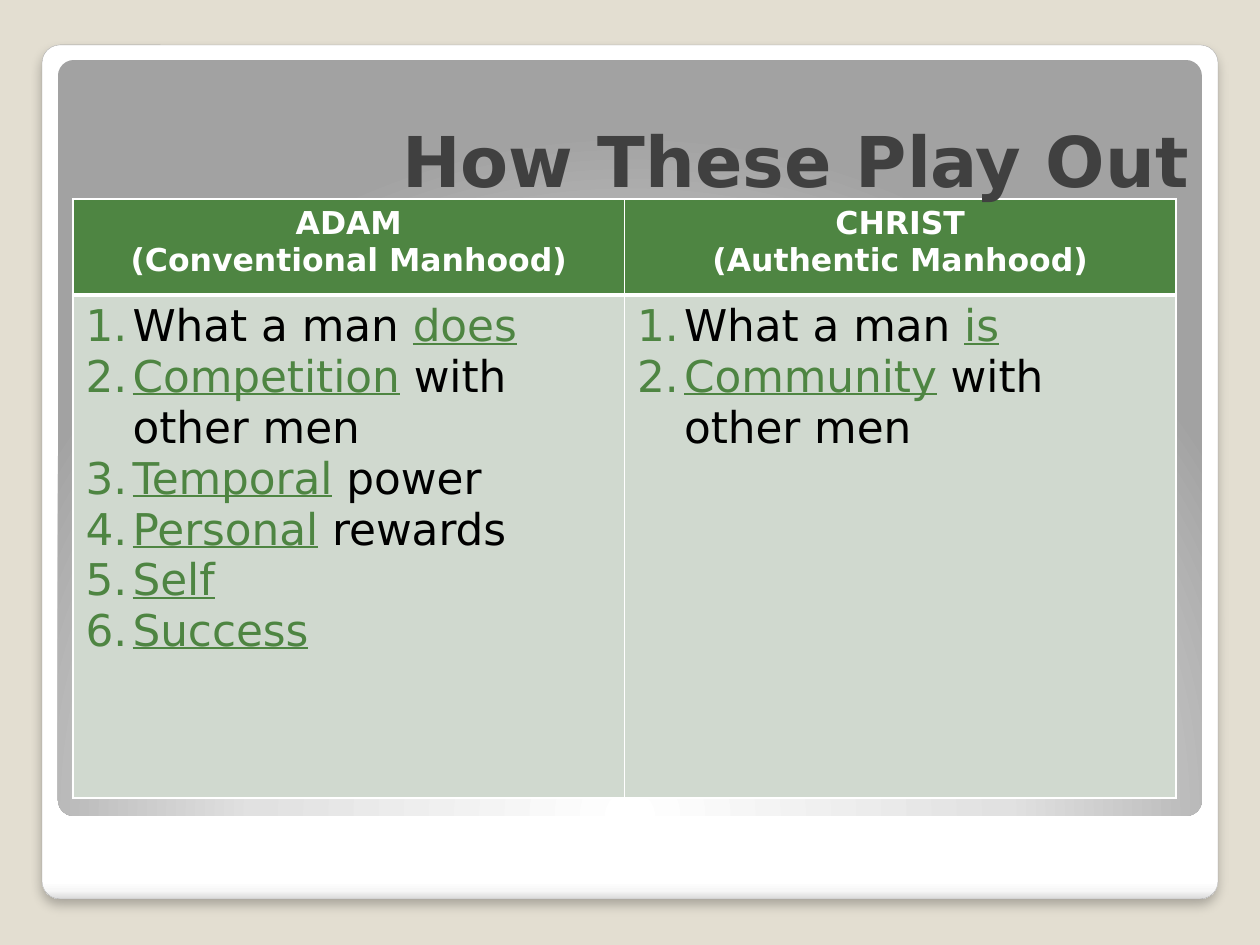
from lxml.etree import SubElement
from pptx import Presentation
from pptx.dml.color import RGBColor
from pptx.enum.shapes import MSO_SHAPE
from pptx.enum.text import MSO_ANCHOR, PP_ALIGN
from pptx.oxml import parse_xml
from pptx.oxml.ns import nsdecls, qn
from pptx.util import Pt

EMU_PER_PX = 914400 / 126
FONT = "DejaVu Sans"
COLORS = {
    "background": "E3DED1",
    "white": "FFFFFF",
    "black": "000000",
    "title": "404040",
    "green": "4E8542",
    "pale_green": "D0D9CF",
    "outline": "A4A4A4",
}

HEADINGS = [
    ("ADAM", "(Conventional Manhood)"),
    ("CHRIST", "(Authentic Manhood)"),
]
# Each item is (plain lead, underlined key word, plain tail)
LISTS = [
    [
        ("What a man ", "does", ""),
        ("", "Competition", " with other men"),
        ("", "Temporal", " power"),
        ("", "Personal", " rewards"),
        ("", "Self", ""),
        ("", "Success", ""),
    ],
    [
        ("What a man ", "is", ""),
        ("", "Community", " with other men"),
    ],
]


def px(length):
    return round(length * EMU_PER_PX)


def rgb(name):
    return RGBColor.from_string(COLORS[name])


def write_run(paragraph, text, size, color, bold=False, underline=False):
    run = paragraph.add_run()
    run.text = text
    font = run.font
    font.name, font.size = FONT, Pt(size)
    font.bold, font.underline = bold, underline
    font.color.rgb = rgb(color)


def paragraphs_of(text_frame, count):
    """Return count paragraphs, using the one that is already there."""
    for _ in range(count - 1):
        text_frame.add_paragraph()
    return text_frame.paragraphs


class SlideBuilder:
    def __init__(self, presentation):
        self.slide = presentation.slides.add_slide(presentation.slide_layouts[6])
        fill = self.slide.background.fill
        fill.solid()
        fill.fore_color.rgb = rgb("background")

    def panel(self, left, top, width, height, stops, direction):
        """Rounded rectangle with a gradient of (percent, hex) stops."""
        shape = self.slide.shapes.add_shape(
            MSO_SHAPE.ROUNDED_RECTANGLE, px(left), px(top), px(width), px(height))
        shape.adjustments[0] = 0.021
        shape.shadow.inherit = False
        shape.line.fill.background()
        stop_list = "".join(
            f'<a:gs pos="{percent * 1000}"><a:srgbClr val="{color}"/></a:gs>'
            for percent, color in stops)
        gradient = parse_xml(
            f'<a:gradFill {nsdecls("a")} rotWithShape="1">'
            f"<a:gsLst>{stop_list}</a:gsLst>{direction}</a:gradFill>")
        shape._element.spPr.find(qn("a:prstGeom")).addnext(gradient)
        return shape

    def outline(self, shape, color, width):
        shape.line.color.rgb = rgb(color)
        shape.line.width = Pt(width)

    def drop_shadow(self, shape, blur, distance, opacity):
        effects = shape._element.spPr.find(qn("a:effectLst"))
        effects.append(parse_xml(
            f'<a:outerShdw {nsdecls("a")} blurRad="{Pt(blur)}" dist="{Pt(distance)}" '
            f'dir="5400000" algn="t" rotWithShape="0"><a:srgbClr val="{COLORS["black"]}">'
            f'<a:alpha val="{opacity * 1000}"/></a:srgbClr></a:outerShdw>'))

    def title(self, text, left, top, width, height):
        box = self.slide.shapes.add_textbox(px(left), px(top), px(width), px(height))
        frame = box.text_frame
        frame.word_wrap = True
        frame.vertical_anchor = MSO_ANCHOR.BOTTOM
        paragraph = frame.paragraphs[0]
        paragraph.alignment = PP_ALIGN.RIGHT
        write_run(paragraph, text, size=40, color="title", bold=True)

    def table(self, left, top, width, row_heights, columns):
        table = self.slide.shapes.add_table(
            len(row_heights), columns, px(left), px(top),
            px(width), px(sum(row_heights))).table
        for column in table.columns:
            column.width = px(width / columns)
        for row, height in zip(table.rows, row_heights):
            row.height = px(height)
        return table

    def cell_style(self, cell, fill, top, bottom):
        cell.fill.solid()
        cell.fill.fore_color.rgb = rgb(fill)
        properties = cell._tc.get_or_add_tcPr()
        borders = [("L", 1), ("R", 1), ("T", top), ("B", bottom)]
        for position, (side, width) in enumerate(borders):
            properties.insert(position, parse_xml(
                f'<a:ln{side} {nsdecls("a")} w="{Pt(width)}"><a:solidFill>'
                f'<a:srgbClr val="{COLORS["white"]}"/></a:solidFill></a:ln{side}>'))

    def heading_cell(self, cell, lines):
        self.cell_style(cell, "green", top=1, bottom=3)
        for paragraph, line in zip(paragraphs_of(cell.text_frame, len(lines)), lines):
            paragraph.alignment = PP_ALIGN.CENTER
            write_run(paragraph, line, size=18, color="white", bold=True)

    def list_cell(self, cell, items):
        self.cell_style(cell, "pale_green", top=3, bottom=1)
        for paragraph, item in zip(paragraphs_of(cell.text_frame, len(items)), items):
            self.number(paragraph)
            lead, key_word, tail = item
            if lead:
                write_run(paragraph, lead, size=25, color="black")
            write_run(paragraph, key_word, size=25, color="green", underline=True)
            if tail:
                write_run(paragraph, tail, size=25, color="black")

    def number(self, paragraph):
        properties = paragraph._p.get_or_add_pPr()
        indent = px(47)
        properties.set("marL", str(indent))
        properties.set("indent", str(-indent))
        bullet_color = SubElement(properties, qn("a:buClr"))
        SubElement(bullet_color, qn("a:srgbClr")).set("val", COLORS["green"])
        SubElement(properties, qn("a:buAutoNum")).set("type", "arabicPeriod")


def main():
    presentation = Presentation()
    presentation.slide_width, presentation.slide_height = px(1260), px(945)
    builder = SlideBuilder(presentation)

    # White card with a soft shadow
    card = builder.panel(
        42, 45, 1176, 854,
        [(0, "FFFFFF"), (98, "FFFFFF"), (99, "F7F7F7"), (100, "DADADA")],
        '<a:lin ang="5400000" scaled="0"/>')
    builder.outline(card, "outline", 0.16)
    builder.drop_shadow(card, blur=6, distance=4, opacity=25)

    # Grey panel lit from below
    builder.panel(
        58, 60, 1144, 756,
        [(0, "FFFFFF"), (55, "E1E1E1"), (100, "A2A2A2")],
        '<a:path path="circle"><a:fillToRect l="50000" t="175000" '
        'r="50000" b="-75000"/></a:path>')

    # Comparison table
    table = builder.table(73, 199, 1103, [96, 503], columns=len(HEADINGS))
    for column, (heading, items) in enumerate(zip(HEADINGS, LISTS)):
        builder.heading_cell(table.cell(0, column), heading)
        builder.list_cell(table.cell(1, column), items)

    # Title
    builder.title("How These Play Out", 73, 63, 1128, 145)

    presentation.save("out.pptx")


if __name__ == "__main__":
    main()
